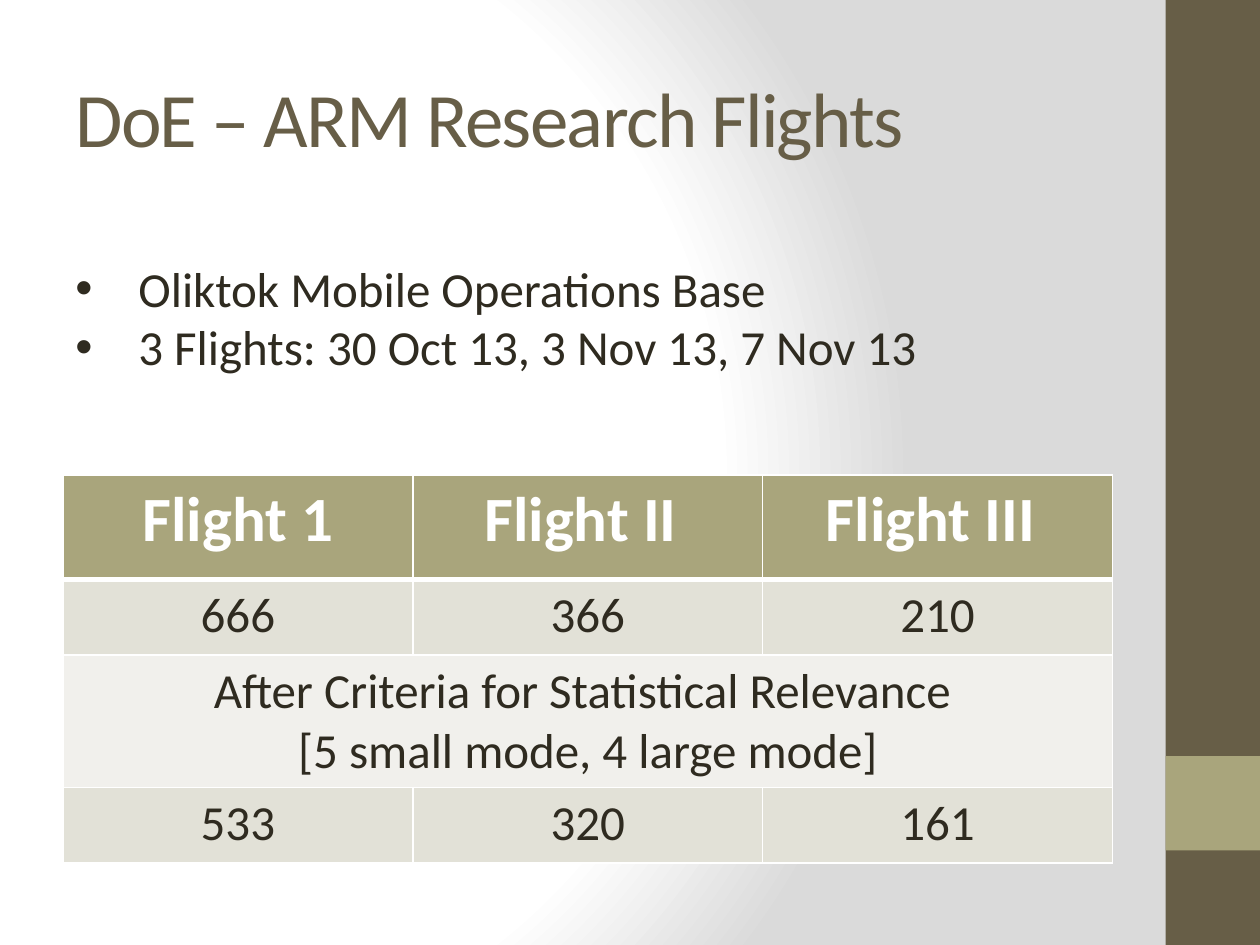
from dataclasses import dataclass

from lxml import etree
from pptx import Presentation
from pptx import oxml
from pptx import util as u
from pptx.dml.color import RGBColor
from pptx.enum import shapes, text
from pptx.oxml.ns import nsdecls, qn


@dataclass(frozen=True)
class Theme:
    font: str = "Calibri"
    brown: str = "675E47"
    olive: str = "A9A57C"
    ink: str = "2F2B20"
    white: str = "FFFFFF"
    grey: str = "DADADA"
    band: str = "E2E1D7"
    pale: str = "F1F0EC"
    title: int = 44
    header: int = 36
    body: int = 28


T = Theme()


def add_run(p, words, size, color, bold=False):
    r = p.add_run()
    r.text = words
    r.font.name, r.font.size, r.font.bold = T.font, u.Pt(size), bold
    r.font.color.rgb = RGBColor.from_string(color)
    return r


def set_background(s):
    stops = "".join(
        f'<a:gs pos="{pos * 1000}"><a:srgbClr val="{color}"/></a:gs>'
        for pos, color in ((0, T.white), (75, T.white), (100, T.grey)))
    bg = oxml.parse_xml(
        f'<p:bg {nsdecls("p", "a")}><p:bgPr><a:gradFill rotWithShape="1">'
        f'<a:gsLst>{stops}</a:gsLst><a:path path="circle">'
        '<a:fillToRect l="20000" t="50000" r="100000" b="50000"/></a:path>'
        '</a:gradFill><a:effectLst/></p:bgPr></p:bg>')
    s.element.cSld.insert(0, bg)


def add_block(s, top, height, color):
    sp = s.shapes.add_shape(shapes.MSO_SHAPE.RECTANGLE, u.Inches(9.25),
                            u.Inches(top), u.Inches(0.75), u.Inches(height))
    sp.shadow.inherit = False
    sp.fill.solid()
    sp.fill.fore_color.rgb = RGBColor.from_string(color)
    sp.line.fill.background()


def add_text_frame(s, left, top, width, height, anchor):
    sp = s.shapes.add_textbox(*map(u.Inches, (left, top, width, height)))
    tf = sp.text_frame
    tf.word_wrap, tf.vertical_anchor = True, anchor
    return tf


def add_title(s, words):
    tf = add_text_frame(s, 0.5, 0.3, 8.33, 1.25, text.MSO_ANCHOR.MIDDLE)
    r = add_run(tf.paragraphs[0], words, T.title, T.brown)
    r.font._element.set("spc", "-100")


def add_bullets(s, items):
    tf = add_text_frame(s, 0.5, 2, 8.25, 1.04, text.MSO_ANCHOR.TOP)
    tf.auto_size = text.MSO_AUTO_SIZE.SHAPE_TO_FIT_TEXT
    for i, words in enumerate(items):
        p = tf.add_paragraph() if i else tf.paragraphs[0]
        pPr = p._p.get_or_add_pPr()
        pPr.set("marL", str(u.Inches(0.5)))
        pPr.set("indent", str(u.Inches(-0.5)))
        etree.SubElement(pPr, qn("a:buFont")).set("typeface", "Arial")
        etree.SubElement(pPr, qn("a:buChar")).set("char", "•")
        add_run(p, words, T.body, T.ink)


def set_borders(cell, widths):
    tcPr = cell._tc.get_or_add_tcPr()
    for i, (side, width) in enumerate(widths.items()):
        tcPr.insert(i, oxml.parse_xml(
            f'<a:ln{side} {nsdecls("a")} w="{u.Pt(width)}"><a:solidFill>'
            f'<a:srgbClr val="{T.white}"/></a:solidFill></a:ln{side}>'))


def add_flight_table(s, rows):
    heights = (0.83, 0.6, 1.05, 0.6)
    fills = (T.olive, T.band, T.pale, T.band)
    frame = s.shapes.add_table(len(rows), 3, u.Inches(0.5), u.Inches(3.77),
                               u.Inches(8.33), u.Inches(sum(heights)))
    table = frame.table
    for column in table.columns:
        column.width = u.Inches(8.33 / 3)
    for i, row in enumerate(rows):
        table.rows[i].height = u.Inches(heights[i])
        header = i == 0
        for j in range(3):
            cell = table.cell(i, j)
            cell.fill.solid()
            cell.fill.fore_color.rgb = RGBColor.from_string(fills[i])
            set_borders(cell, {"L": 1, "R": 1, "T": 3 if i == 1 else 1,
                               "B": 3 if header else 1})
        # A row with a single entry spans the whole table
        if len(row) == 1:
            table.cell(i, 0).merge(table.cell(i, 2))
        for j, words in enumerate(row):
            tf = table.cell(i, j).text_frame
            for k, line in enumerate(words.split("\n")):
                p = tf.add_paragraph() if k else tf.paragraphs[0]
                p.alignment = text.PP_ALIGN.CENTER
                add_run(p, line, T.header if header else T.body,
                        T.white if header else T.ink, header)


def main():
    prs = Presentation()
    prs.slide_width, prs.slide_height = u.Inches(10), u.Inches(7.5)
    s = prs.slides.add_slide(prs.slide_layouts[6])

    # Background and side band
    set_background(s)
    add_block(s, 0, 7.5, T.brown)
    add_block(s, 6, 0.75, T.olive)

    # Content
    add_title(s, "DoE – ARM Research Flights")
    add_flight_table(s, [
        ("Flight 1", "Flight II ", "Flight III "),
        ("666", "366", "210"),
        ("After Criteria for Statistical Relevance \n"
         "[5 small mode, 4 large mode]",),
        ("533", "320", "161"),
    ])
    add_bullets(s, ["Oliktok Mobile Operations Base",
                    "3 Flights: 30 Oct 13, 3 Nov 13, 7 Nov 13"])
    prs.save("out.pptx")


if __name__ == "__main__":
    main()
